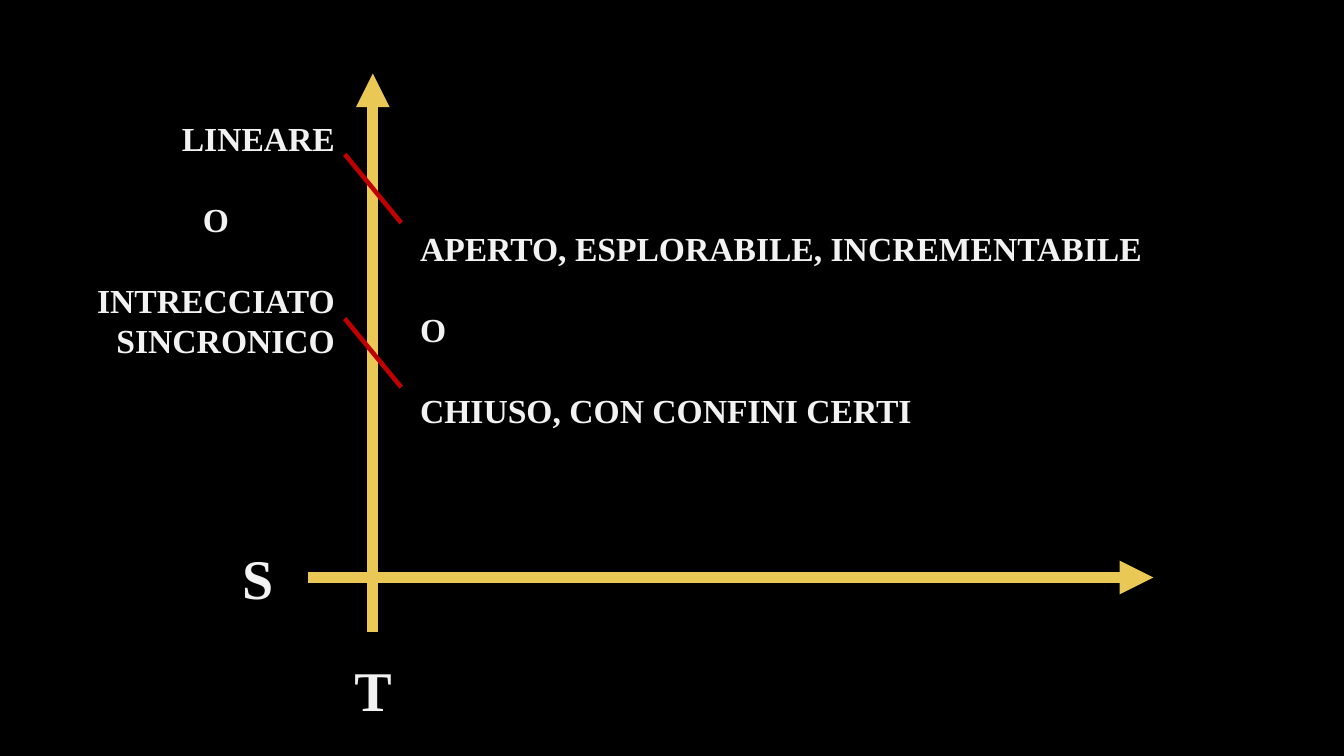
from lxml import etree
from pptx import Presentation, util as u
from pptx.dml.color import RGBColor
from pptx.enum import shapes, text
from pptx.oxml.ns import qn

COLORS = {"bg": "000000", "axis": "E9C856", "text": "F2F2F2", "slash": "C00000"}
LEFT, CENTER, RIGHT = text.PP_ALIGN.LEFT, text.PP_ALIGN.CENTER, text.PP_ALIGN.RIGHT
FONT = {"name": "Times New Roman", "bold": True}
BLANK_LINE = 29


def color(key):
    return RGBColor.from_string(COLORS[key])


def add_line(s, x1, y1, x2, y2, key, width, arrow=False):
    c = s.shapes.add_connector(shapes.MSO_CONNECTOR.STRAIGHT,
                               u.Pt(x1), u.Pt(y1), u.Pt(x2), u.Pt(y2))
    c.line.color.rgb = color(key)
    c.line.width = u.Pt(width)
    if arrow:
        etree.SubElement(c.line._get_or_add_ln(), qn("a:tailEnd"), type="triangle")
    etree.SubElement(c._element.spPr, qn("a:effectLst"))


def add_text(s, box, lines, size):
    sp = s.shapes.add_textbox(*map(u.Pt, box))
    tf = sp.text_frame
    tf.word_wrap = False
    tf.auto_size = text.MSO_AUTO_SIZE.SHAPE_TO_FIT_TEXT
    for i, (line, align, gap) in enumerate(lines):
        p = tf.add_paragraph() if i else tf.paragraphs[0]
        p.alignment = align
        p.space_after = u.Pt(gap)
        r = p.add_run()
        r.text = line
        for name, value in {**FONT, "size": u.Pt(size)}.items():
            setattr(r.font, name, value)
        r.font.color.rgb = color("text")


def add_axes(s, x, y, w, h):
    origin_x, origin_y = x + 46.5, y + 360
    add_line(s, origin_x, y + h, origin_x, y, "axis", 8, arrow=True)
    add_line(s, x, origin_y, x + w, origin_y, "axis", 8, arrow=True)
    add_text(s, (x - 54, origin_y - 28, 36.7, 55.4), [("S", LEFT, 0)], 40)
    add_text(s, (origin_x - 20.2, y + h + 13, 41.8, 55.4), [("T", LEFT, 0)], 40)


def add_time_options(s, x, y, w, h):
    add_text(s, (x, y, w, h), [
        ("LINEARE", RIGHT, BLANK_LINE),
        ("O", CENTER, BLANK_LINE),
        ("INTRECCIATO", RIGHT, 0),
        ("SINCRONICO", RIGHT, 0)], 24)


def add_space_options(s, x, y, w, h):
    add_text(s, (x, y, w, h), [
        ("APERTO, ESPLORABILE, INCREMENTABILE", LEFT, BLANK_LINE),
        ("O", LEFT, BLANK_LINE),
        ("CHIUSO, CON CONFINI CERTI", LEFT, 0)], 24)


def add_slashes(s, x, y, w, h, pitch):
    for top in (y, y + pitch):
        add_line(s, x, top, x + w, top + h, "slash", 3.25)


def main():
    prs = Presentation()
    prs.slide_width, prs.slide_height = u.Pt(960), u.Pt(540)
    s = prs.slides.add_slide(prs.slide_layouts[6])
    s.background.fill.solid()
    s.background.fill.fore_color.rgb = color("bg")
    add_axes(s, 219.8, 52.5, 604, 399)
    add_time_options(s, 59.8, 80.6, 186.5, 181.4)
    add_space_options(s, 293, 159.1, 535.7, 152.6)
    add_slashes(s, 246.3, 110.2, 40.3, 49, 117.4)
    prs.save("out.pptx")


if __name__ == "__main__":
    main()
